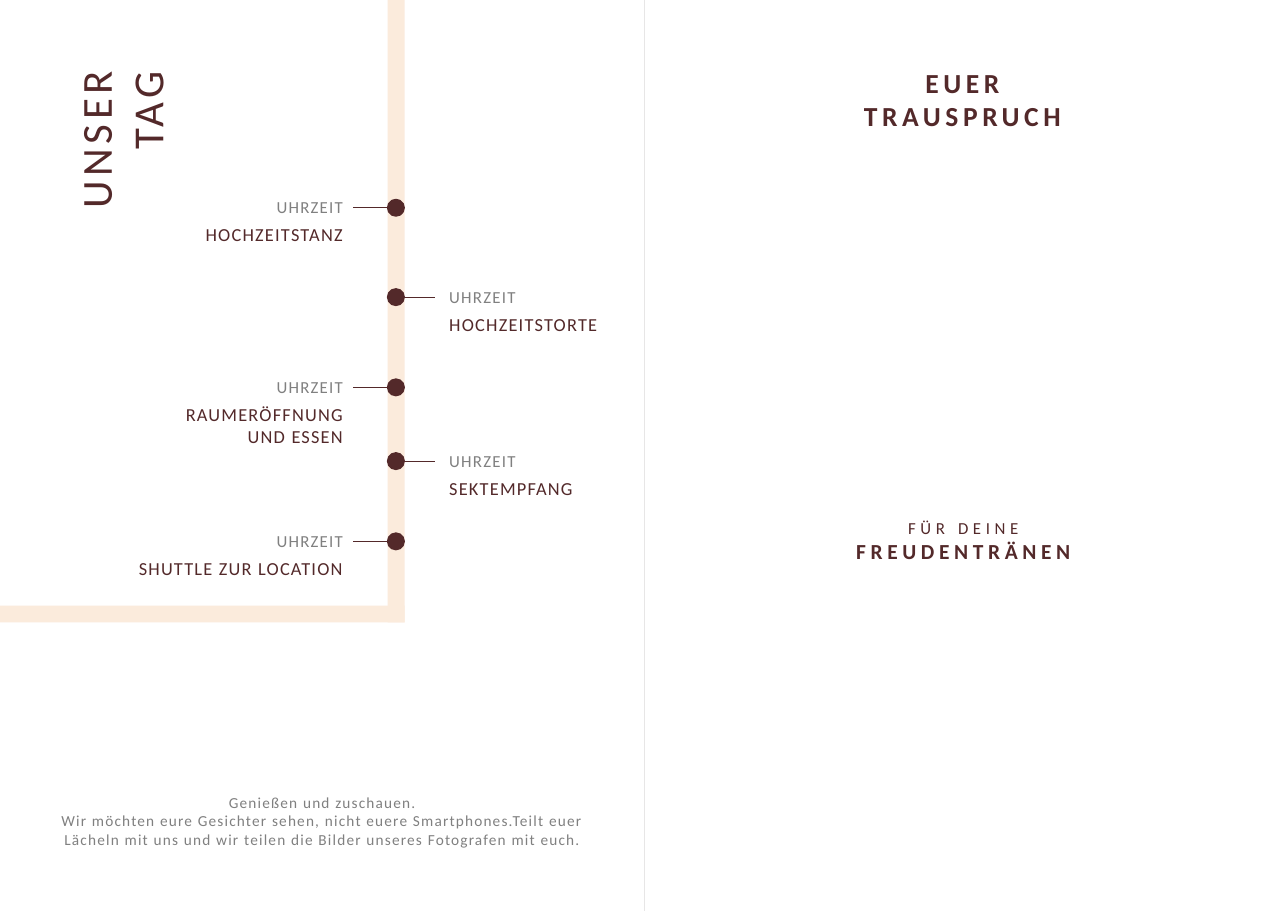
from lxml import etree
from pptx import Presentation
from pptx.dml.color import RGBColor
from pptx.enum.shapes import MSO_CONNECTOR, MSO_SHAPE
from pptx.enum.text import MSO_ANCHOR, MSO_AUTO_SIZE, PP_ALIGN
from pptx.oxml.ns import qn
from pptx.util import Cm, Pt

LEFT, CENTER, RIGHT = PP_ALIGN.LEFT, PP_ALIGN.CENTER, PP_ALIGN.RIGHT
RECTANGLE, OVAL = MSO_SHAPE.RECTANGLE, MSO_SHAPE.OVAL
STRAIGHT = MSO_CONNECTOR.STRAIGHT
TOP = MSO_ANCHOR.TOP
GROW = MSO_AUTO_SIZE.SHAPE_TO_FIT_TEXT

BROWN, PEACH, GREY, FOLD_GREY = "53292A", "FBEBDC", "808080", "E7E6E6"


def color(hex_code):
    return RGBColor.from_string(hex_code)


class Card:
    font_name = "Calibri"

    def __init__(self, slide):
        self.slide = slide

    def fill_frame(self, frame, lines, align, wrap=False):
        """Fill a frame with (text, size, colour, spacing in points, bold) lines."""
        frame.word_wrap = wrap
        frame.auto_size = GROW
        frame.vertical_anchor = TOP
        for index, (text, size, ink, spacing, bold) in enumerate(lines):
            paragraph = frame.add_paragraph() if index else frame.paragraphs[0]
            paragraph.text = text
            paragraph.alignment = align
            font = paragraph.font
            font.name, font.size, font.bold = self.font_name, Pt(size), bold
            font.color.rgb = color(ink)
            font._rPr.set("spc", str(round(spacing * 100)))

    def title(self, lines, left, top, width, height):
        heading = self.slide.shapes.title
        heading.left, heading.top = Cm(left), Cm(top)
        heading.width, heading.height = Cm(width), Cm(height)
        heading.rotation = 270
        self.fill_frame(heading.text_frame, lines, RIGHT)

    def text(self, lines, left, top, width, height, align=CENTER, wrap=False):
        box = self.slide.shapes.add_textbox(Cm(left), Cm(top), Cm(width), Cm(height))
        self.fill_frame(box.text_frame, lines, align, wrap)

    def shape(self, preset, fill, left, top, width, height, outline=None):
        shape = self.slide.shapes.add_shape(preset, Cm(left), Cm(top), Cm(width), Cm(height))
        shape.shadow.inherit = False
        shape.fill.solid()
        shape.fill.fore_color.rgb = color(fill)
        if outline:
            shape.line.color.rgb = color(fill)
            shape.line.width = Pt(outline)
        else:
            shape.line.fill.background()

    def line(self, x1, y1, x2, y2, ink, weight):
        line = self.slide.shapes.add_connector(STRAIGHT, Cm(x1), Cm(y1), Cm(x2), Cm(y2))
        line.line.color.rgb = color(ink)
        line.line.width = Pt(weight)
        etree.SubElement(line._element.spPr, qn("a:effectLst"))

    def event(self, y, names, name_width, on_left):
        """Draw a dot on the timeline at height y with its time and name beside it."""
        dot = 0.38
        self.shape(OVAL, BROWN, BAR_LEFT, y - dot / 2, dot, dot, outline=1)
        if on_left:
            self.line(BAR_LEFT, y, 8.15, y, BROWN, 0.75)
            align, time_width = RIGHT, 2.09
        else:
            self.line(10.03, y, 9.27, y, BROWN, 0.75)
            align, time_width = LEFT, 4.22

        def label_left(width):
            return 8.16 - width if on_left else 10.11

        self.text([("UHRZEIT", 11, GREY, 0.8, False)],
                  label_left(time_width), y - 0.37, time_width, 0.73, align)
        self.text([(name, 12, BROWN, 0.8, False) for name in names],
                  label_left(name_width), y + 0.24, name_width, 0.25 + 0.51 * len(names), align)


BAR_LEFT, BAR_WIDTH, BAR_BOTTOM = 8.94, 0.39, 14.35
EVENTS = [
    (4.79, ["HOCHZEITSTANZ"], 3.76),
    (6.85, ["HOCHZEITSTORTE"], 4.01),
    (8.93, ["RAUMERÖFFNUNG", "UND ESSEN"], 4.22),
    (10.63, ["SEKTEMPFANG"], 3.43),
    (12.48, ["SHUTTLE ZUR LOCATION"], 5.31),
]


def main():
    deck = Presentation()
    deck.slide_width, deck.slide_height = Cm(29.7), Cm(21)
    card = Card(deck.slides.add_slide(deck.slide_layouts[5]))

    card.line(14.86, 0, 14.86, 21, FOLD_GREY, 0.5)
    card.title([(word, 28, BROWN, 3, False) for word in ("UNSER", "TAG")],
               0.84, 2.01, 3.89, 2.64)

    card.shape(RECTANGLE, PEACH, BAR_LEFT, 0, BAR_WIDTH, BAR_BOTTOM)
    card.shape(RECTANGLE, PEACH, 0, BAR_BOTTOM - BAR_WIDTH, BAR_LEFT + BAR_WIDTH, BAR_WIDTH)
    for index, (y, names, name_width) in enumerate(EVENTS):
        card.event(y, names, name_width, on_left=index % 2 == 0)

    card.text([(sentence, 10, GREY, 0.8, False) for sentence in (
        "Genießen und zuschauen.",
        "Wir möchten eure Gesichter sehen, nicht euere Smartphones.Teilt euer\v"
        "Lächeln mit uns und wir teilen die Bilder unseres Fotografen mit euch.",
    )], 0, 18.16, 14.86, 1.55, wrap=True)

    card.text([(word, 18, BROWN, 3, True) for word in ("EUER", "TRAUSPRUCH")],
              19.58, 1.4, 5.23, 1.8)
    card.text([("FÜR DEINE", 11, BROWN, 3, False), ("FREUDENTRÄNEN", 14, BROWN, 3, True)],
              19.41, 11.81, 5.61, 1.32)

    deck.save("out.pptx")


if __name__ == "__main__":
    main()
